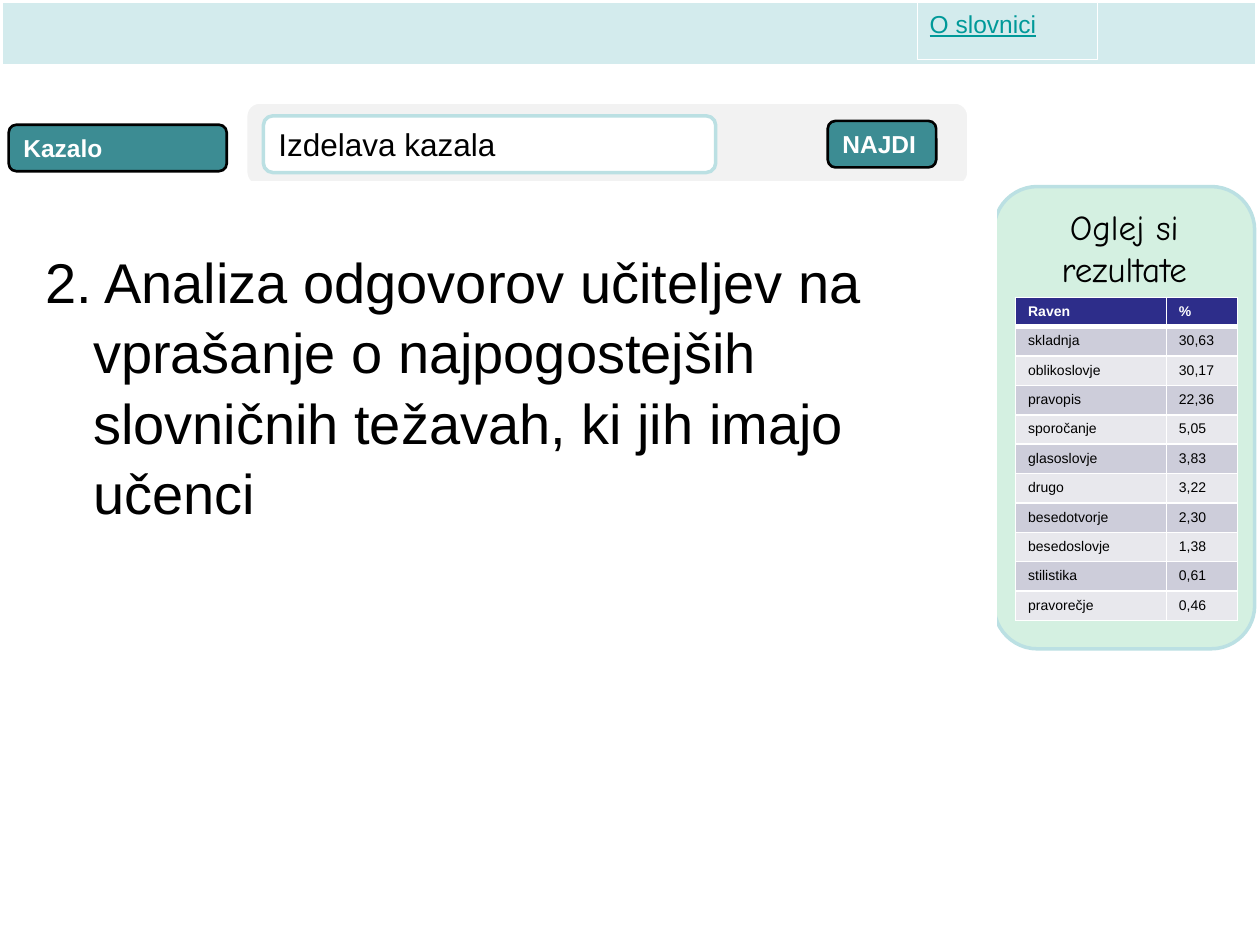
from lxml.etree import SubElement
from pptx import Presentation
from pptx.dml.color import RGBColor
from pptx.enum.shapes import MSO_SHAPE
from pptx.enum.text import MSO_ANCHOR, PP_ALIGN
from pptx.oxml.ns import qn
from pptx.util import Pt

RESULTS = [
    ("Raven", "%"),
    ("skladnja", "30,63"),
    ("oblikoslovje", "30,17"),
    ("pravopis", "22,36"),
    ("sporočanje", "5,05"),
    ("glasoslovje", "3,83"),
    ("drugo", "3,22"),
    ("besedotvorje", "2,30"),
    ("besedoslovje", "1,38"),
    ("stilistika", "0,61"),
    ("pravorečje", "0,46"),
]


def rgb(color):
    """Turn a hex string into a colour."""
    return RGBColor.from_string(color)


def set_font(p, size, color, bold=False, name="Arial"):
    """Format every run of a paragraph."""
    for r in p.runs:
        r.font.name = name
        r.font.size = Pt(size)
        r.font.bold = bold
        r.font.color.rgb = rgb(color)


def add_box(slide, kind, x, y, w, h, fill, line, width):
    """Add a filled, outlined shape without a shadow."""
    sp = slide.shapes.add_shape(kind, Pt(x), Pt(y), Pt(w), Pt(h))
    sp.shadow.inherit = False
    sp.fill.solid()
    sp.fill.fore_color.rgb = rgb(fill)
    sp.line.color.rgb = rgb(line)
    sp.line.width = Pt(width)
    return sp


def add_text(sp, text, size, color, bold=False, name="Arial",
             align=PP_ALIGN.LEFT, anchor=MSO_ANCHOR.TOP):
    """Write one paragraph into a shape and return it."""
    tf = sp.text_frame
    tf.word_wrap = True
    tf.vertical_anchor = anchor
    p = tf.paragraphs[0]
    p.text = text
    p.alignment = align
    set_font(p, size, color, bold, name)
    return p


def add_button(slide, x, y, w, text):
    """Add a teal button with a bold white label."""
    sp = add_box(slide, MSO_SHAPE.ROUNDED_RECTANGLE, x, y, w, 26.6,
                 "3C8C93", "000000", 1.5)
    add_text(sp, text, 14, "FFFFFF", bold=True, anchor=MSO_ANCHOR.MIDDLE)


def set_borders(cell, bottom):
    """Draw white cell borders, with a given width at the bottom."""
    tcPr = cell._tc.get_or_add_tcPr()
    widths = {"a:lnL": 1, "a:lnR": 1, "a:lnT": 1, "a:lnB": bottom}
    for tag, width in widths.items():
        ln = SubElement(tcPr, qn(tag), w=str(Pt(width)))
        fill = SubElement(ln, qn("a:solidFill"))
        SubElement(fill, qn("a:srgbClr"), val="FFFFFF")


def add_results(slide, x, y, widths, row_height):
    """Add the banded results table."""
    frame = slide.shapes.add_table(len(RESULTS), len(widths), Pt(x), Pt(y),
                                   Pt(sum(widths)),
                                   Pt(row_height * len(RESULTS)))
    table = frame.table
    for column, width in zip(table.columns, widths):
        column.width = Pt(width)
    for i, values in enumerate(RESULTS):
        table.rows[i].height = Pt(row_height)
        header = i == 0
        band = "2D2D8A" if header else ("E8E8ED", "CDCDDA")[i % 2]
        for j, value in enumerate(values):
            cell = table.cell(i, j)
            set_borders(cell, 3 if header else 1)
            cell.fill.solid()
            cell.fill.fore_color.rgb = rgb(band)
            p = cell.text_frame.paragraphs[0]
            p.text = value
            set_font(p, 8, "FFFFFF" if header else "000000", bold=header)


def add_body(slide):
    """Add the main statement with its hanging indent."""
    sp = add_box(slide, MSO_SHAPE.RECTANGLE, 3.6, 104.4, 565.2, 427,
                 "FFFFFF", "FFFFFF", 2)
    p = add_text(sp, "2. Analiza odgovorov učiteljev na vprašanje o "
                 "najpogostejših slovničnih težavah, ki jih imajo učenci",
                 32, "000000")
    p.line_spacing = 1.05
    sp.text_frame.margin_top = Pt(35)
    pPr = p._p.get_or_add_pPr()
    pPr.set("marL", str(Pt(42.5)))
    pPr.set("indent", str(Pt(-27.4)))


def main():
    """Build the slide and save it."""
    prs = Presentation()
    prs.slide_width, prs.slide_height = Pt(720), Pt(540)
    slide = prs.slides.add_slide(prs.slide_layouts[6])
    rounded, rect = MSO_SHAPE.ROUNDED_RECTANGLE, MSO_SHAPE.RECTANGLE

    add_box(slide, rounded, 140.4, 58.3, 413.3, 48.2, "F2F2F2", "FFFFFF", 2)
    add_button(slide, 5, 71.3, 124.6, "Kazalo")
    add_button(slide, 473, 69.1, 62, "NAJDI")

    add_box(slide, rect, -0.7, -0.7, 720, 39.6, "D3EBED", "FFFFFF", 4.5)
    about = add_box(slide, rect, 524.2, 1.4, 103, 32.4,
                    "D3EBED", "FFFFFF", 0.25)
    p = add_text(about, "O slovnici", 14, "009999")
    p.runs[0].font.underline = True

    panel = add_box(slide, rounded, 568, 106.6, 149, 264.2,
                    "D4F0E1", "BBE0E3", 2)
    add_text(panel, "Oglej si rezultate", 20, "000000", name="Comic Neue",
             align=PP_ALIGN.CENTER)
    search = add_box(slide, rounded, 150.5, 66.2, 258.5, 32.4,
                     "FFFFFF", "BBE0E3", 2)
    add_text(search, "Izdelava kazala", 18, "000000",
             anchor=MSO_ANCHOR.MIDDLE)
    add_body(slide)
    add_results(slide, 580.3, 169.9, (86.2, 40.8), 16.8)
    prs.save("out.pptx")


if __name__ == "__main__":
    main()
